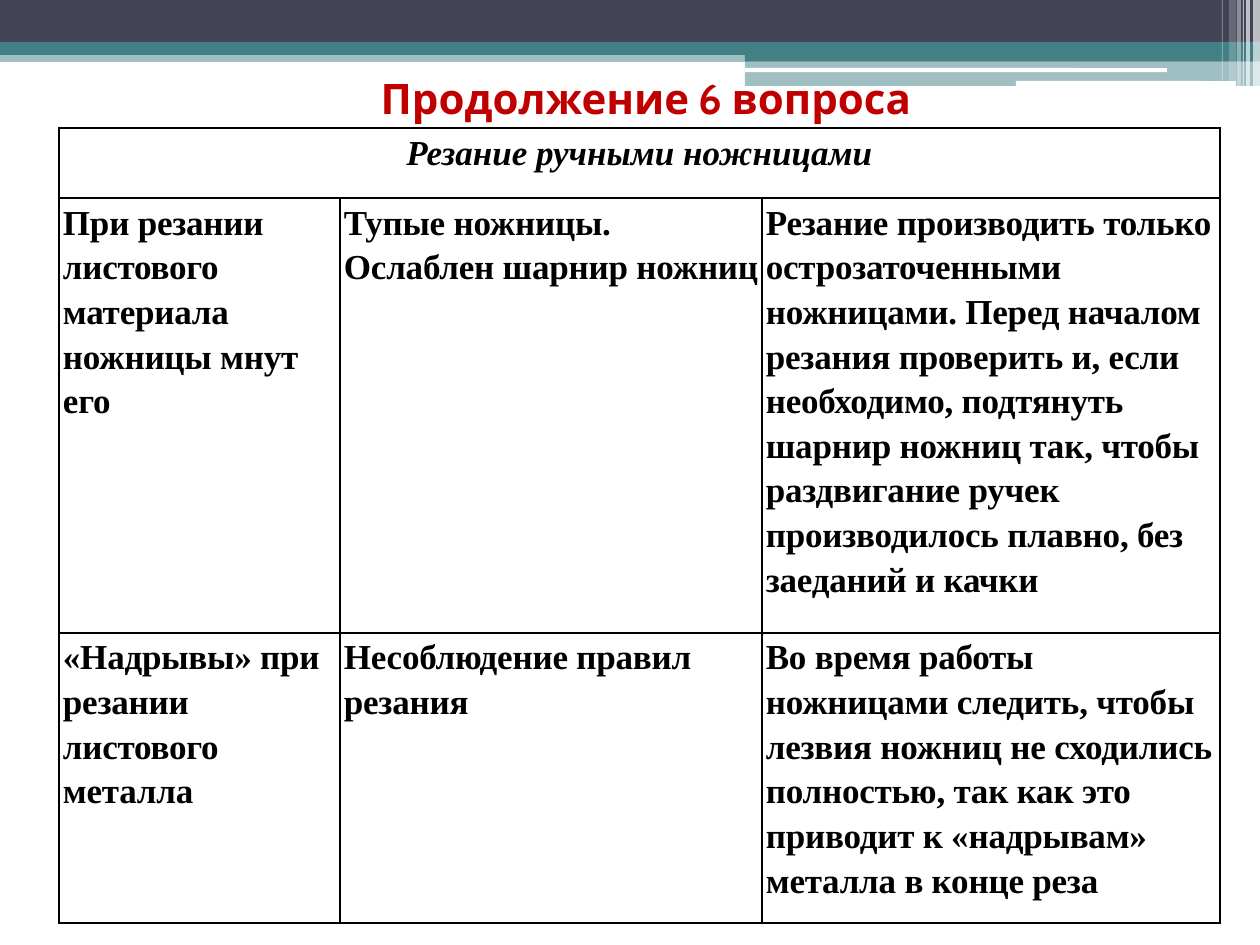
from lxml import etree
from pptx import Presentation
from pptx.dml.color import RGBColor
from pptx.enum.shapes import MSO_SHAPE
from pptx.enum.text import MSO_ANCHOR, PP_ALIGN
from pptx.oxml.ns import qn
from pptx.util import Pt

RECT, ROUNDED = MSO_SHAPE.RECTANGLE, MSO_SHAPE.ROUNDED_RECTANGLE
CENTER, LEFT = PP_ALIGN.CENTER, PP_ALIGN.LEFT
MIDDLE = MSO_ANCHOR.MIDDLE

NAVY, TEAL, WHITE, BLACK, RED = "424456", "438086", "FFFFFF", "000000", "C00000"
BODY_FONT, TITLE_FONT = "Times New Roman", "Cabin"

# Header bands: shape, left, top, width, height, colour, opacity in percent
BANDS = [
    (RECT, 0, 50, 1260, 12, TEAL, 50),
    (RECT, 0, 0, 1260, 43, NAVY, 100),
    (RECT, 0, 42, 1260, 13, TEAL, 100),
    (RECT, 745, 49, 515, 12, TEAL, 100),
    (RECT, 745, 61, 515, 25, TEAL, 50),
    (ROUNDED, 745, 68, 422, 4, WHITE, 100),
    (ROUNDED, 1016, 81, 220, 5, WHITE, 100),
]
# Light stripes in the corner: left, width, height, opacity in percent
STRIPES = [
    (1253, 7, 86, 65),
    (1246, 4, 86, 65),
    (1243, 1, 86, 60),
    (1237, 4, 86, 40),
    (1229, 7, 81, 20),
    (1222, 1, 81, 30),
]

COLUMN_WIDTHS = [281, 422, 458]
ROW_HEIGHTS = [70, 393, 281]
HEADING = "Резание ручными ножницами"
DEFECTS = [
    ("При резании листового материала ножницы мнут его",
     "Тупые ножницы. Ослаблен шарнир ножниц",
     "Резание производить только острозаточенными ножницами. Перед началом "
     "резания проверить и, если необходимо, подтянуть шарнир ножниц так, чтобы "
     "раздвигание ручек производилось плавно, без заеданий и качки"),
    ("«Надрывы» при резании листового металла",
     "Несоблюдение правил резания",
     "Во время работы ножницами следить, чтобы лезвия ножниц не сходились "
     "полностью, так как это приводит к «надрывам» металла в конце реза"),
]


def px(length):
    return int(length * 914400 / 126)


def color(value):
    return RGBColor.from_string(value)


def add_band(slide, kind, left, top, width, height, fill, opacity):
    shape = slide.shapes.add_shape(kind, px(left), px(top), px(width), px(height))
    shape.shadow.inherit = False
    shape.line.fill.background()
    shape.fill.solid()
    shape.fill.fore_color.rgb = color(fill)
    if opacity < 100:
        fill_color = shape.fill._xPr.find(qn("a:solidFill"))[0]
        etree.SubElement(fill_color, qn("a:alpha"), val=str(opacity * 1000))


def style_paragraph(paragraph, font_name, size, font_color, align, italic=False):
    paragraph.alignment = align
    font = paragraph.font
    font.name, font.size = font_name, Pt(size)
    font.bold, font.italic = True, italic
    font.color.rgb = color(font_color)


def add_title(slide, text):
    box = slide.shapes.add_textbox(px(79), px(69), px(1134), px(58))
    frame = box.text_frame
    frame.word_wrap = True
    frame.vertical_anchor = MIDDLE
    frame.margin_top = frame.margin_bottom = 0
    frame.text = text
    style_paragraph(frame.paragraphs[0], TITLE_FONT, 24, RED, CENTER)


def add_borders(cell):
    properties = cell._tc.get_or_add_tcPr()
    for side in ("lnL", "lnR", "lnT", "lnB"):
        line = etree.SubElement(properties, qn("a:" + side), w=str(Pt(1)))
        fill = etree.SubElement(line, qn("a:solidFill"))
        etree.SubElement(fill, qn("a:srgbClr"), val=BLACK)


def fill_cell(cell, text, align=LEFT, italic=False, spacing=0):
    cell.text = text
    paragraph = cell.text_frame.paragraphs[0]
    paragraph.line_spacing = 1.15
    style_paragraph(paragraph, BODY_FONT, 20, BLACK, align, italic)
    if spacing:  # hundredths of a point
        paragraph.runs[0].font._element.set("spc", str(spacing))


def add_defects_table(slide):
    table = slide.shapes.add_table(
        len(ROW_HEIGHTS), len(COLUMN_WIDTHS), px(59), px(128),
        px(sum(COLUMN_WIDTHS)), px(sum(ROW_HEIGHTS))).table
    table.first_row = table.horz_banding = False
    for column, width in zip(table.columns, COLUMN_WIDTHS):
        column.width = px(width)
    for row, height in zip(table.rows, ROW_HEIGHTS):
        row.height = px(height)
    for cell in table.iter_cells():
        cell.margin_left = cell.margin_right = px(4)
        cell.margin_top = cell.margin_bottom = 0
        add_borders(cell)
        cell.fill.solid()
        cell.fill.fore_color.rgb = color(WHITE)

    # Heading across all columns, then one row per defect
    table.cell(0, 0).merge(table.cell(0, len(COLUMN_WIDTHS) - 1))
    fill_cell(table.cell(0, 0), HEADING, CENTER, italic=True)
    for row, texts in enumerate(DEFECTS, start=1):
        for column, text in enumerate(texts):
            fill_cell(table.cell(row, column), text, spacing=-15)


def main():
    presentation = Presentation()
    presentation.slide_width, presentation.slide_height = px(1260), px(945)
    slide = presentation.slides.add_slide(presentation.slide_layouts[6])

    # Header decoration
    for band in BANDS:
        add_band(slide, *band)
    for left, width, height, opacity in STRIPES:
        add_band(slide, RECT, left, 0, width, height, WHITE, opacity)

    # Content
    add_title(slide, "Продолжение 6 вопроса")
    add_defects_table(slide)
    presentation.save("out.pptx")


if __name__ == "__main__":
    main()
